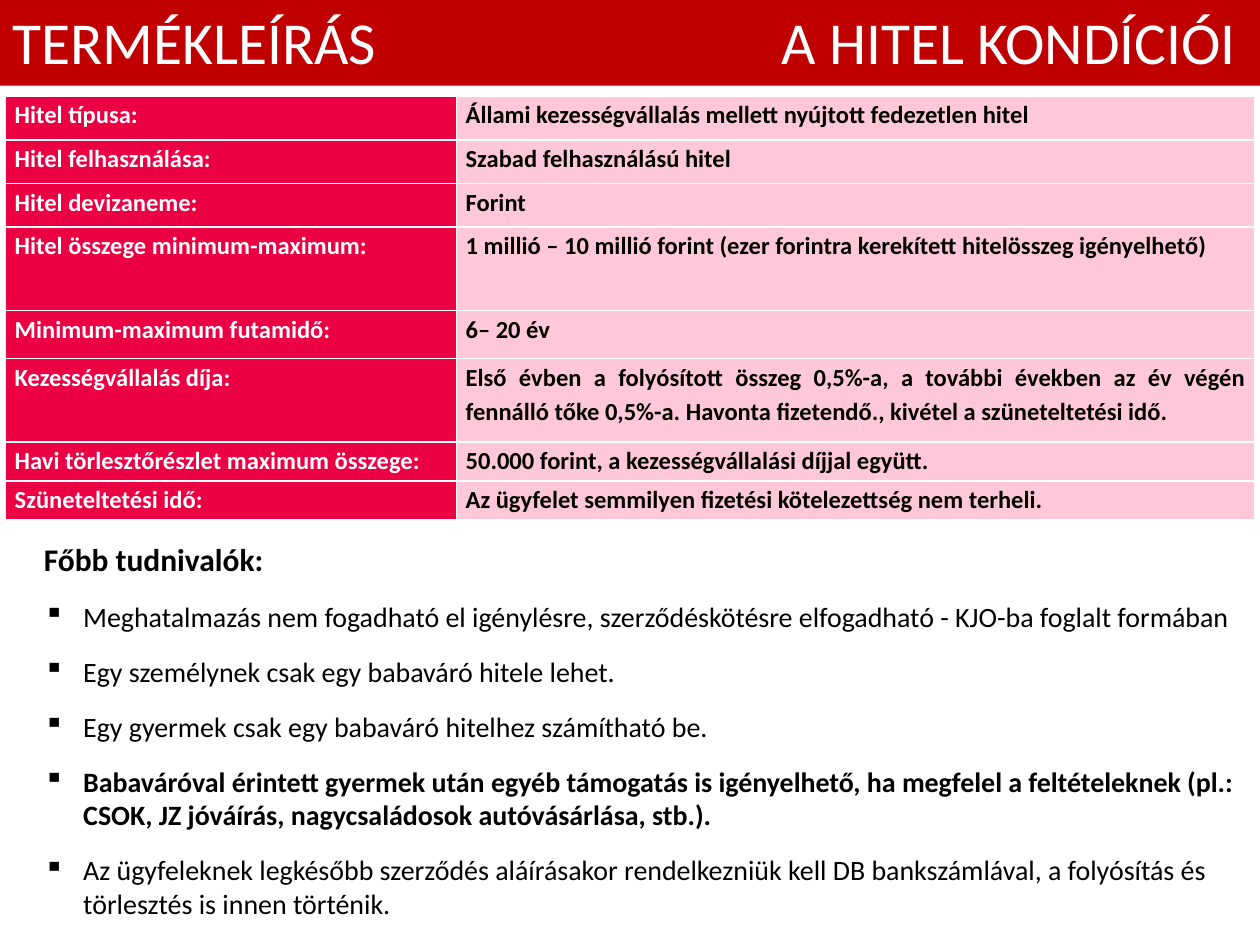
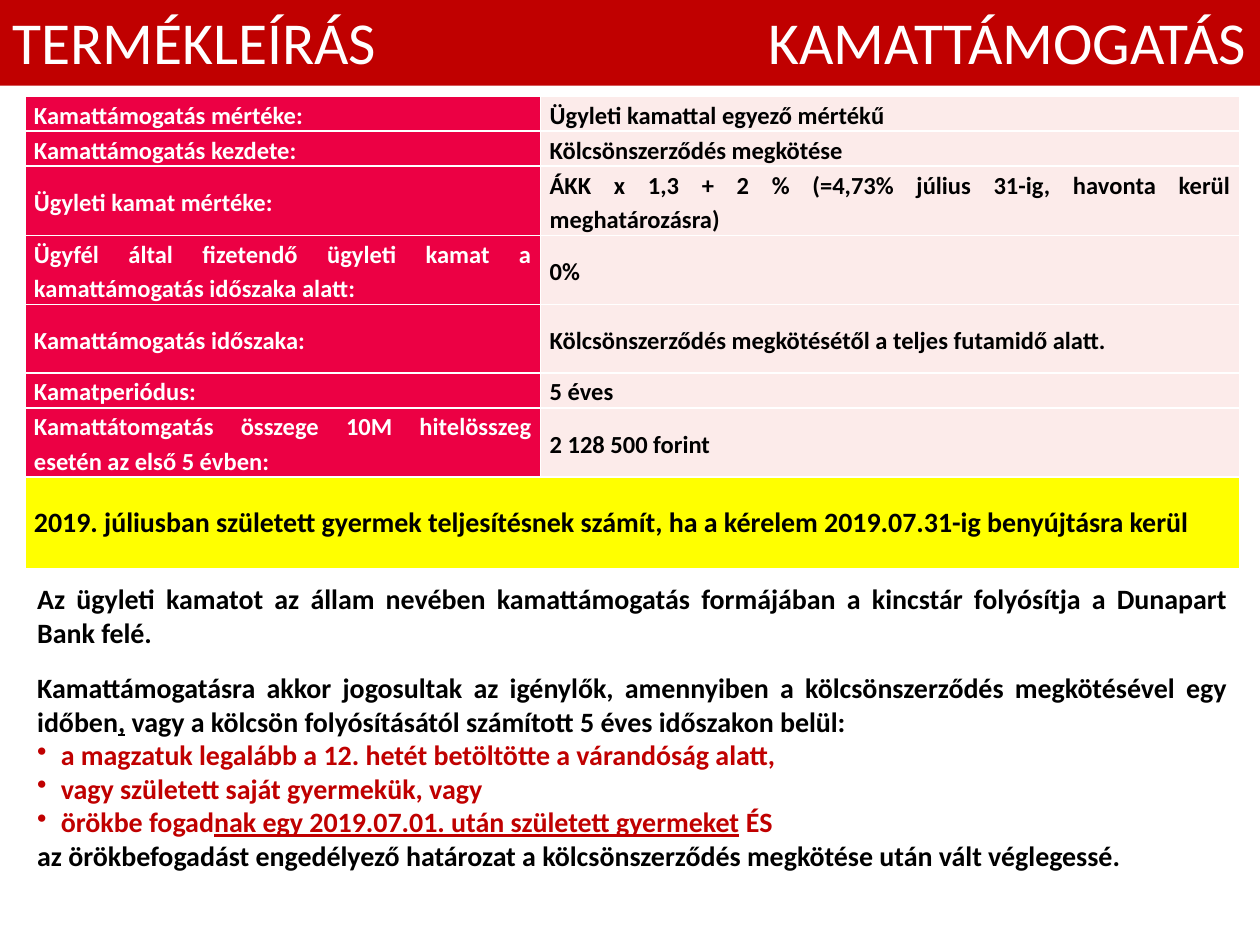
from lxml.etree import SubElement
from pptx import Presentation
from pptx.dml.color import RGBColor
from pptx.enum.shapes import MSO_SHAPE
from pptx.enum.text import MSO_ANCHOR, MSO_AUTO_SIZE, PP_ALIGN
from pptx.oxml.ns import qn
from pptx.util import Pt

FONT = "Calibri"
RED, CRIMSON, WHITE, BLACK = "C00000", "EC0044", "FFFFFF", "000000"
PINK, BLUSH, YELLOW = "FFC8D8", "FCEBEA", "FFFF00"
GAP = 12.2

LOAN_TERMS = [
    (25, "Hitel típusa:", "Állami kezességvállalás mellett nyújtott fedezetlen hitel"),
    (25, "Hitel felhasználása:", "Szabad felhasználású hitel"),
    (25, "Hitel devizaneme:", "Forint"),
    (47.5, "Hitel összege minimum-maximum:",
     "1 millió – 10 millió forint (ezer forintra kerekített hitelösszeg igényelhető)"),
    (27.5, "Minimum-maximum futamidő:", "6– 20 év"),
    (47.7, "Kezességvállalás díja:",
     "Első évben a folyósított összeg 0,5%-a, a további években az év végén fennálló "
     "tőke 0,5%-a. Havonta fizetendő., kivétel a szüneteltetési idő."),
    (22.4, "Havi törlesztőrészlet maximum összege:",
     "50.000 forint, a kezességvállalási díjjal együtt."),
    (22.4, "Szüneteltetési idő:", "Az ügyfelet semmilyen fizetési kötelezettség nem terheli."),
]

KEY_FACTS = [
    ("Meghatalmazás nem fogadható el igénylésre, szerződéskötésre elfogadható - "
     "KJO-ba foglalt formában", False),
    ("Egy személynek csak egy babaváró hitele lehet.", False),
    ("Egy gyermek csak egy babaváró hitelhez számítható be.", False),
    ("Babaváróval érintett gyermek után egyéb támogatás is igényelhető, ha megfelel a "
     "feltételeknek (pl.: CSOK, JZ jóváírás, nagycsaládosok autóvásárlása, stb.).", True),
    ("Az ügyfeleknek legkésőbb szerződés aláírásakor rendelkezniük kell DB bankszámlával, "
     "a folyósítás és törlesztés is innen történik.", False),
]

SUBSIDY_TERMS = [
    (20, "Kamattámogatás mértéke:", "Ügyleti kamattal egyező mértékű"),
    (20, "Kamattámogatás kezdete:", "Kölcsönszerződés megkötése"),
    (39.6, "Ügyleti kamat mértéke:",
     "ÁKK x 1,3 + 2 % (=4,73% július 31-ig, havonta kerül meghatározásra)"),
    (39.6, "Ügyfél által fizetendő ügyleti kamat a kamattámogatás időszaka alatt:", "0%"),
    (39, "Kamattámogatás időszaka:", "Kölcsönszerződés megkötésétől a teljes futamidő alatt."),
    (20, "Kamatperiódus:", "5 éves"),
    (39.6, "Kamattátomgatás összege 10M hitelösszeg esetén az első 5 évben:",
     "2 128 500 forint"),
    (52.5, "2019. júliusban született gyermek teljesítésnek számít, ha a kérelem "
     "2019.07.31-ig benyújtásra kerül", None),
]

ELIGIBLE_CASES = [
    [("a magzatuk legalább a 12. hetét betöltötte a várandóság alatt,", False)],
    [("vagy született saját gyermekük, vagy", False)],
    [("örökbe fogad", False), ("nak egy 2019.07.01. után született gyermeket", True),
     (" ÉS", False)],
]


def rgb(value):
    return RGBColor.from_string(value)


def write(paragraph, runs, size, color=BLACK, bold=False, align=PP_ALIGN.LEFT,
          before=0, bullet=None, indent=0):
    if bullet:
        properties = paragraph._p.get_or_add_pPr()
        properties.set("marL", str(Pt(indent)))
        properties.set("indent", str(-Pt(indent)))
        SubElement(properties, qn("a:buChar"), char=bullet)
    paragraph.alignment = align
    paragraph.space_before = Pt(before)
    for text, underlined in runs:
        run = paragraph.add_run()
        run.text = text
        font = run.font
        font.name, font.size, font.bold = FONT, Pt(size), bold
        font.underline = underlined
        font.color.rgb = rgb(color)


def add_title_band(slide, topic, topic_left):
    band = slide.shapes.add_shape(MSO_SHAPE.RECTANGLE, Pt(0), Pt(-2), Pt(723), Pt(51))
    band.shadow.inherit = False
    band.fill.solid()
    band.fill.fore_color.rgb = rgb(RED)
    band.line.fill.background()
    frame = band.text_frame
    frame.vertical_anchor = MSO_ANCHOR.MIDDLE
    title = frame.paragraphs[0]
    tabs = SubElement(title._p.get_or_add_pPr(), qn("a:tabLst"))
    SubElement(tabs, qn("a:tab"), pos=str(Pt(topic_left)), algn="l")
    write(title, [(f"TERMÉKLEÍRÁS\t{topic}", False)], 34, WHITE)


def add_text_area(slide, left, top, width, height, anchor=MSO_ANCHOR.TOP):
    area = slide.shapes.add_textbox(Pt(left), Pt(top), Pt(width), Pt(height))
    frame = area.text_frame
    frame.word_wrap = True
    frame.auto_size = MSO_AUTO_SIZE.SHAPE_TO_FIT_TEXT
    frame.vertical_anchor = anchor
    return frame


def fill_cell(cell, text, fill, color, anchor, size=14, spacing=1.15):
    properties = cell._tc.get_or_add_tcPr()
    for side in ("a:lnL", "a:lnR", "a:lnT", "a:lnB"):
        border = SubElement(properties, qn(side), w=str(Pt(1)))
        SubElement(SubElement(border, qn("a:solidFill")), qn("a:srgbClr"), val=WHITE)
    cell.fill.solid()
    cell.fill.fore_color.rgb = rgb(fill)
    cell.margin_left = cell.margin_right = Pt(5.2)
    cell.margin_top = cell.margin_bottom = 0
    cell.vertical_anchor = anchor
    paragraph = cell.text_frame.paragraphs[0]
    paragraph.line_spacing = spacing
    write(paragraph, [(text, False)], size, color, True, PP_ALIGN.JUSTIFY)


def add_terms(slide, terms, left, widths, value_fill, anchor):
    height = sum(term[0] for term in terms)
    table = slide.shapes.add_table(len(terms), 2, Pt(left), Pt(54.9),
                                   Pt(sum(widths)), Pt(height)).table
    table.first_row = table.horz_banding = False
    for column, width in zip(table.columns, widths):
        column.width = Pt(width)
    for index, (row_height, label, value) in enumerate(terms):
        table.rows[index].height = Pt(row_height)
        label_cell, value_cell = table.cell(index, 0), table.cell(index, 1)
        if value is None:
            label_cell.merge(value_cell)
            fill_cell(label_cell, label, YELLOW, BLACK, anchor, 16, 1.0)
        else:
            fill_cell(label_cell, label, CRIMSON, WHITE, anchor)
            fill_cell(value_cell, value, value_fill, BLACK, anchor)


def build_loan_terms(slide):
    facts = add_text_area(slide, 18, 305.3, 709, 225.5)
    write(facts.paragraphs[0], [("Főbb tudnivalók:", False)], 18, bold=True)
    for fact, bold in KEY_FACTS:
        write(facts.add_paragraph(), [(fact, False)], 16, bold=bold,
              before=GAP, bullet="▪", indent=22.5)
    add_terms(slide, LOAN_TERMS, 3.2, (257.7, 456.1), PINK, MSO_ANCHOR.TOP)
    add_title_band(slide, "A HITEL KONDÍCIÓI", 439.5)


def build_interest_subsidy(slide):
    add_terms(slide, SUBSIDY_TERMS, 14.2, (294.7, 399.6), BLUSH, MSO_ANCHOR.MIDDLE)
    add_title_band(slide, "KAMATTÁMOGATÁS", 432)
    rules = add_text_area(slide, 14.2, 328.3, 694.6, 174.2, MSO_ANCHOR.MIDDLE)
    style = {"size": 16, "bold": True, "align": PP_ALIGN.JUSTIFY}
    write(rules.paragraphs[0], [
        ("Az ügyleti kamatot az állam nevében kamattámogatás formájában a kincstár "
         "folyósítja a Dunapart Bank felé.", False)], **style)
    write(rules.add_paragraph(), [
        ("Kamattámogatásra akkor jogosultak az igénylők, amennyiben a kölcsönszerződés "
         "megkötésével egy időben", False),
        (",", True),
        (" vagy a kölcsön folyósításától számított 5 éves időszakon belül:", False)],
        before=GAP, **style)
    for case in ELIGIBLE_CASES:
        write(rules.add_paragraph(), case, color=RED, bullet="•", indent=13.5, **style)
    write(rules.add_paragraph(), [
        ("az örökbefogadást engedélyező határozat a kölcsönszerződés megkötése után "
         "vált véglegessé.", False)], **style)


def main():
    deck = Presentation()
    deck.slide_width, deck.slide_height = Pt(720), Pt(540)
    blank = deck.slide_layouts[6]
    for build in (build_loan_terms, build_interest_subsidy):
        build(deck.slides.add_slide(blank))
    deck.save("out.pptx")


if __name__ == "__main__":
    main()
